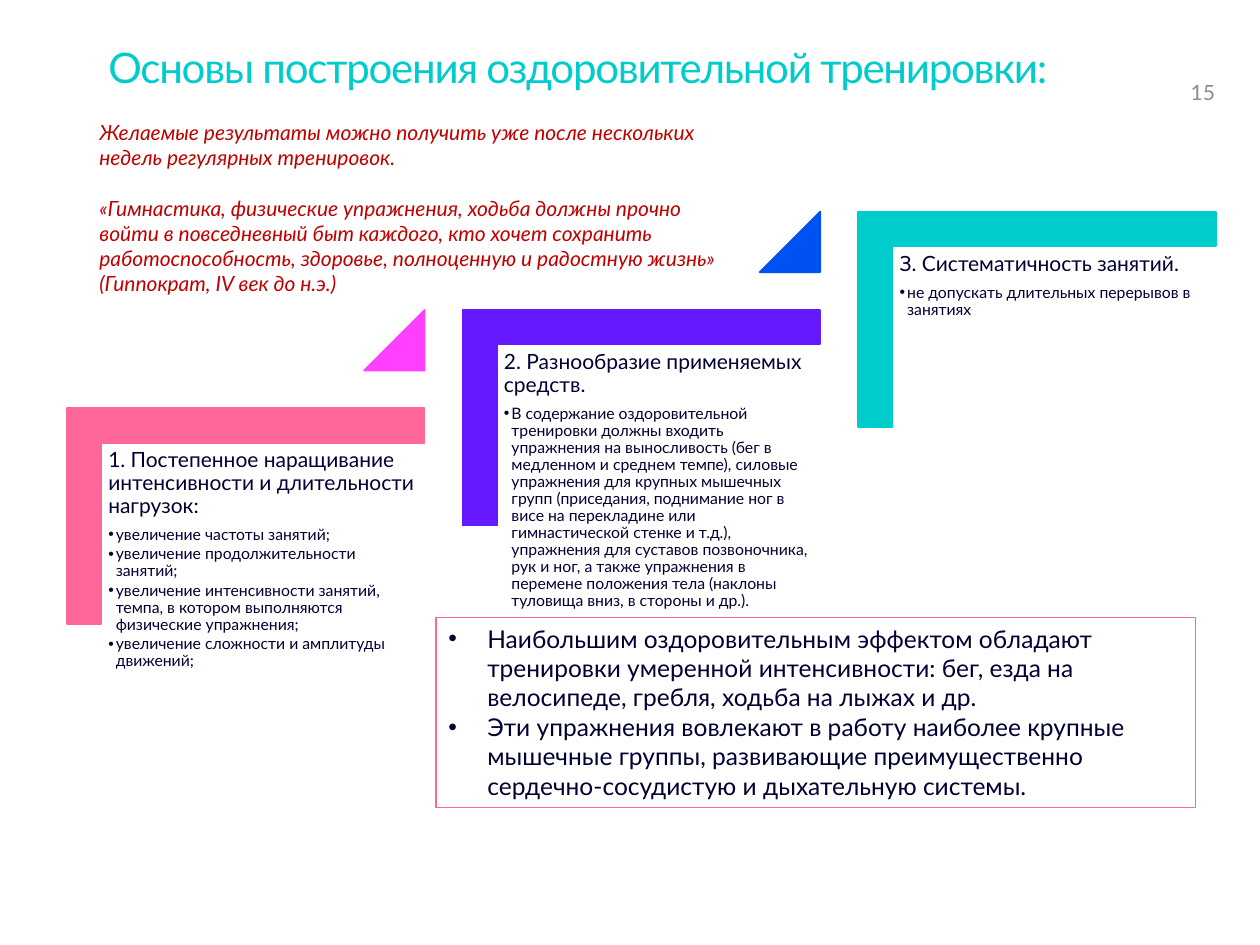
from lxml import etree
from pptx import Presentation
from pptx.dml.color import RGBColor
from pptx.enum.shapes import MSO_SHAPE
from pptx.enum.text import MSO_ANCHOR, PP_ALIGN
from pptx.oxml.ns import qn
from pptx.util import Pt

CORNER = MSO_SHAPE.CORNER
TRIANGLE = MSO_SHAPE.ISOSCELES_TRIANGLE
RECT = MSO_SHAPE.RECTANGLE
TOP, BOTTOM = MSO_ANCHOR.TOP, MSO_ANCHOR.BOTTOM
LEFT = PP_ALIGN.LEFT

WHITE = RGBColor(0xFF, 0xFF, 0xFF)
NAVY = RGBColor(0x00, 0x00, 0x33)
PINK = RGBColor(0xFF, 0x66, 0x99)
MAGENTA = RGBColor(0xFF, 0x40, 0xFF)
VIOLET = RGBColor(0x66, 0x19, 0xFF)
BLUE = RGBColor(0x00, 0x51, 0xF2)
TEAL = RGBColor(0x00, 0xCC, 0xCC)
RED = RGBColor(0xC0, 0x00, 0x00)
GRAY = RGBColor(0x8C, 0x8C, 0x90)

FONT = "Lato"
PX = 9144
STEP_W, STEP_H = 284, 171
STEP_DX, STEP_DY = 314, -78

HEADING = {"line_spacing": 0.9, "space_after": Pt(5)}
ITEM = {"line_spacing": 0.9, "space_after": Pt(1.4)}

STEPS = [
    ("1. Постепенное наращивание интенсивности и длительности нагрузок:",
     ["увеличение частоты занятий;",
      "увеличение продолжительности занятий;",
      "увеличение интенсивности занятий, темпа, в котором выполняются физические упражнения;",
      "увеличение сложности и амплитуды движений;"],
     PINK, MAGENTA),
    ("2. Разнообразие применяемых средств.",
     ["В содержание оздоровительной тренировки должны входить упражнения на выносливость "
      "(бег в медленном и среднем темпе), силовые упражнения для крупных мышечных групп "
      "(приседания, поднимание ног в висе на перекладине или гимнастической стенке и т.д.), "
      "упражнения для суставов позвоночника, рук и ног, а также упражнения в перемене "
      "положения тела (наклоны туловища вниз, в стороны и др.)."],
     VIOLET, BLUE),
    ("З. Систематичность занятий.",
     ["не допускать длительных перерывов в занятиях"],
     TEAL, None),
]
QUOTE = [
    "Желаемые результаты можно получить уже после нескольких недель регулярных тренировок.",
    "«Гимнастика, физические упражнения, ходьба должны прочно войти в повседневный быт "
    "каждого, кто хочет сохранить работоспособность, здоровье, полноценную и радостную "
    "жизнь» (Гиппократ, IV век до н.э.)",
]
EFFECTS = [
    "Наибольшим оздоровительным эффектом обладают тренировки умеренной интенсивности: "
    "бег, езда на велосипеде, гребля, ходьба на лыжах и др.",
    "Эти упражнения вовлекают в работу наиболее крупные мышечные группы, развивающие "
    "преимущественно сердечно-сосудистую и дыхательную системы.",
]


def set_attrs(obj, fmt):
    for name, value in fmt.items():
        setattr(obj, name, value)


def scaled(*lengths):
    return [round(n * PX) for n in lengths]


def add_shape(s, kind, box, fill, line):
    sp = s.shapes.add_shape(kind, *scaled(*box))
    sp.shadow.inherit = False
    sp.fill.solid()
    sp.fill.fore_color.rgb = fill
    sp.line.color.rgb = line
    sp.line.width = Pt(1)
    return sp


def set_frame(tf, mx=10, my=5, anchor=TOP):
    mx, my = scaled(mx, my)
    set_attrs(tf, {"word_wrap": True, "vertical_anchor": anchor,
                   "margin_left": mx, "margin_right": mx,
                   "margin_top": my, "margin_bottom": my})


def add_text(s, box, **frame):
    tf = s.shapes.add_textbox(*scaled(*box)).text_frame
    set_frame(tf, **frame)
    return tf


def add_par(tf, text, size, color, italic=False, indent=0, fmt=None):
    p = tf.add_paragraph() if tf.text else tf.paragraphs[0]
    if indent:
        pPr = p._p.get_or_add_pPr()
        pPr.set("marL", str(indent * PX))
        pPr.set("indent", str(-indent * PX))
        etree.SubElement(pPr, qn("a:buFont")).set("typeface", "Arial")
        etree.SubElement(pPr, qn("a:buChar")).set("char", "•")
    set_attrs(p, {"alignment": LEFT, **(fmt or {})})
    r = p.add_run()
    r.text = text
    set_attrs(r.font, {"name": FONT, "size": Pt(size), "italic": italic})
    r.font.color.rgb = color
    return r


def add_title(s, box):
    r = add_par(add_text(s, box, mx=0),
                "Основы построения оздоровительной тренировки:", 24, TEAL)
    r._r.get_or_add_rPr().set("spc", "-70")


def add_page_number(s, box):
    add_par(add_text(s, box, mx=0, my=4, anchor=BOTTOM), "15", 12, GRAY)


def add_quote(s, box):
    tf = add_text(s, box)
    for i, text in enumerate(QUOTE):
        add_par(tf, text, 12, RED, italic=True,
                fmt={"space_before": Pt(14.4)} if i else None)


def add_step(s, x, y, heading, items, color, accent):
    shift = (STEP_W - STEP_H) / 2
    sp = add_shape(s, CORNER, (x + shift, y - shift, STEP_H, STEP_W), color, color)
    sp.rotation = 90
    for i in range(2):
        sp.adjustments[i] = 0.16
    tf = add_text(s, (x + 28, y + 28, 256, 225), mx=5)
    add_par(tf, heading, 12, NAVY, fmt=HEADING)
    for item in items:
        add_par(tf, item, 9, NAVY, indent=6, fmt=ITEM)
    if accent:
        sp = add_shape(s, TRIANGLE, (x + STEP_W - 48, y + STEP_DY, 48, 48), accent, accent)
        sp.adjustments[0] = 1


def add_effects(s, box):
    tf = add_shape(s, RECT, box, WHITE, PINK).text_frame
    set_frame(tf)
    for text in EFFECTS:
        add_par(tf, text, 14, NAVY, indent=31)


def main():
    prs = Presentation()
    prs.slide_width, prs.slide_height = scaled(1000, 750)
    s = prs.slides.add_slide(prs.slide_layouts[6])
    for i, step in enumerate(STEPS):
        add_step(s, 53 + i * STEP_DX, 324 + i * STEP_DY, *step)
    add_title(s, (86, 28, 862, 72))
    add_page_number(s, (945, 40, 38, 47))
    add_quote(s, (69, 90, 516, 151))
    add_effects(s, (346, 490, 603, 151))
    prs.save("out.pptx")


if __name__ == "__main__":
    main()
